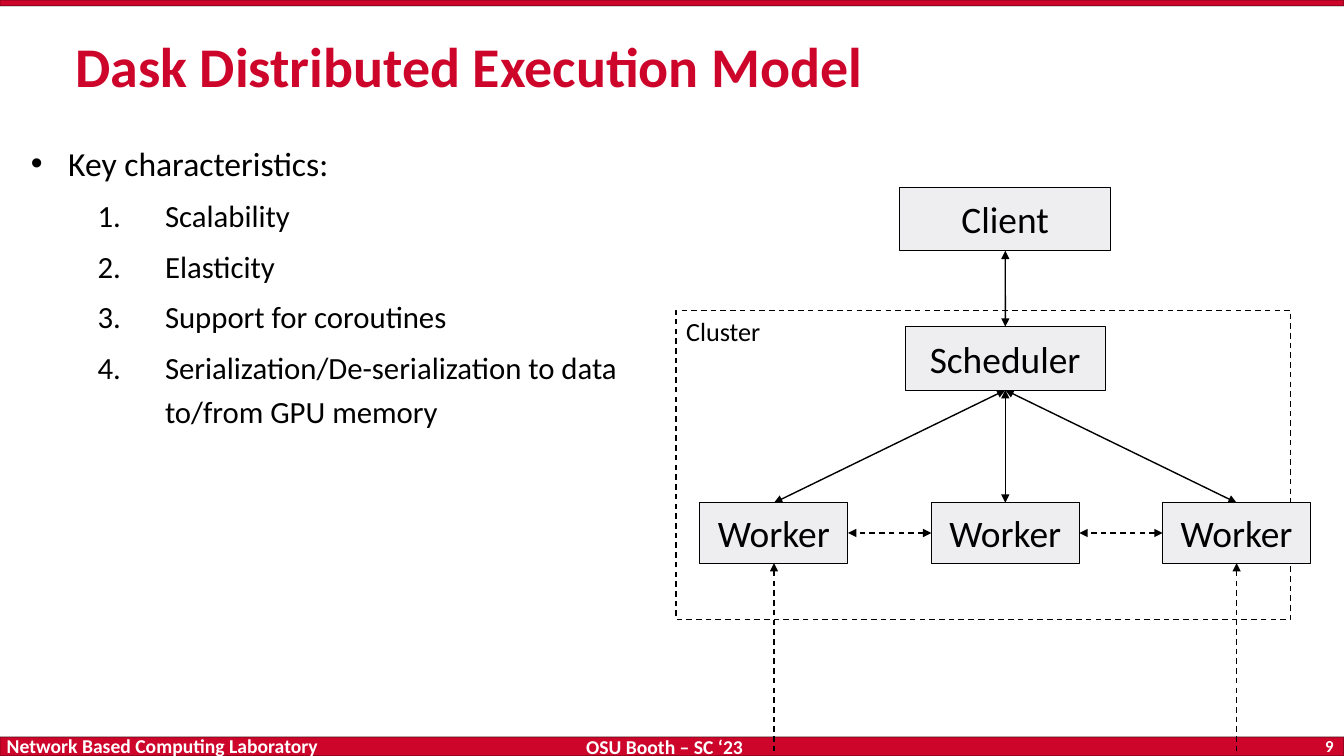
from lxml.etree import SubElement
from pptx import Presentation
from pptx.dml.color import RGBColor
from pptx.enum.dml import MSO_LINE
from pptx.enum.shapes import MSO_CONNECTOR, MSO_SHAPE
from pptx.enum.text import MSO_ANCHOR as ANCHOR, PP_ALIGN as ALIGN
from pptx.oxml.ns import qn
from pptx.util import Cm, Pt

COLORS = {"red": "CD052B", "black": "000000", "white": "FFFFFF", "box": "EEEEF1"}
RGB = {name: RGBColor.from_string(code) for name, code in COLORS.items()}
FONT = "Calibri"

prs = Presentation()
prs.slide_width, prs.slide_height = Cm(33.87), Cm(19.05)
s = prs.slides.add_slide(prs.slide_layouts[6])


def add_box(at, text="", size=18, fill=None, line=None, color="black",
            bold=False, align=ALIGN.LEFT, anchor=ANCHOR.MIDDLE):
    """Add a rectangle if it has a line, otherwise a text box."""
    at = [Cm(v) for v in at]
    if line:
        sp = s.shapes.add_shape(MSO_SHAPE.RECTANGLE, *at)
        sp.shadow.inherit = False
        sp.line.color.rgb = RGB["black"]
        sp.line.width = Pt(line)
        if fill:
            sp.fill.solid()
            sp.fill.fore_color.rgb = RGB[fill]
        else:
            sp.fill.background()
    else:
        sp = s.shapes.add_textbox(*at)
    tf = sp.text_frame
    tf.word_wrap = True
    tf.vertical_anchor = anchor
    tf.text = text
    for p in tf.paragraphs:
        p.alignment = align
        for r in p.runs:
            r.font.name, r.font.size, r.font.bold = FONT, Pt(size), bold
            r.font.color.rgb = RGB[color]
    return sp


def add_arrow(start, start_site, end=None, end_site=0, dashed=False):
    """Join two boxes, or run from one box down to the slide's bottom edge."""
    x = start.left + start.width // 2
    c = s.shapes.add_connector(MSO_CONNECTOR.STRAIGHT, x, start.top + start.height,
                               x, prs.slide_height)
    c.begin_connect(start, start_site)
    if end is not None:
        c.end_connect(end, end_site)
    c.line.color.rgb = RGB["black"]
    c.line.width = Pt(1)
    if dashed:
        c.line.dash_style = MSO_LINE.DASH
    ln = c.line._get_or_add_ln()
    for tag in ("a:headEnd", "a:tailEnd") if end is not None else ("a:headEnd",):
        SubElement(ln, qn(tag), type="triangle")
    SubElement(c._element.spPr, qn("a:effectLst"))


# Bars at the top and bottom, with faint outlines
for top, height in ((18.57, 0.48), (0, 0.15)):
    bar = add_box((0, top, 33.87, height), fill="red", line=1)
    outline = bar.line._get_or_add_ln().find(".//" + qn("a:srgbClr"))
    SubElement(outline, qn("a:alpha"), val="25000")

# Footer
footer = (
    ((-0.08, 18.54, 9.68, 0.66), "Network Based Computing Laboratory", 14, ALIGN.LEFT, ANCHOR.BOTTOM),
    ((11.91, 18.57, 9.68, 0.66), "OSU Booth – SC ‘23", 14, ALIGN.CENTER, ANCHOR.BOTTOM),
    ((31.62, 18.57, 2.24, 0.46), "9", 12, ALIGN.RIGHT, ANCHOR.MIDDLE),
)
for at, text, size, align, anchor in footer:
    add_box(at, text, size, color="white", bold=True, align=align, anchor=anchor)

# Title
add_box((1.65, 0.58, 28.52, 2.13), "Dask Distributed Execution Model", 40,
        color="red", bold=True)

# Key characteristics
items = ("Key characteristics:", "Scalability", "Elasticity", "Support for coroutines",
         "Serialization/De-serialization to data to/from GPU memory")
body = add_box((0.53, 3.28, 17.42, 14.2), "\n".join(items), 22, anchor=ANCHOR.TOP)
for i, p in enumerate(body.text_frame.paragraphs):
    p.line_spacing = 1.2
    pPr = p._p.get_or_add_pPr()
    if i == 0:
        margin, indent = 0.94, -0.94
        SubElement(pPr, qn("a:buFont"), typeface="Arial")
        SubElement(pPr, qn("a:buChar"), char="•")
        p.runs[0].font.size = Pt(24)
    else:
        margin, indent = 3.38, -1.7
        p.level = 1
        p.space_before = Pt(4.4)
        SubElement(pPr, qn("a:buFont"), typeface="+mj-lt")
        SubElement(pPr, qn("a:buAutoNum"), type="arabicPeriod")
    pPr.set("marL", str(Cm(margin)))
    pPr.set("indent", str(Cm(indent)))

# Cluster frame
cluster = add_box((17.04, 7.82, 15.49, 7.8), "Cluster", 18.7, line=1, anchor=ANCHOR.TOP)
cluster.line.dash_style = MSO_LINE.DASH

# Client, scheduler and evenly spaced workers
node = dict(size=26.7, fill="box", line=0.75, align=ALIGN.CENTER)
client = add_box((22.68, 4.72, 5.31, 1.6), "Client", **node)
scheduler = add_box((22.81, 8.23, 5.05, 1.6), "Scheduler", **node)
workers = [add_box((17.64 + 5.83 * i, 12.67, 3.73, 1.52), "Worker", **node)
           for i in range(3)]

# Arrows
add_arrow(client, 2, scheduler, 0)
for worker in workers:
    add_arrow(scheduler, 2, worker, 0)
for left, right in zip(workers, workers[1:]):
    add_arrow(right, 1, left, 3, dashed=True)
for worker in (workers[0], workers[-1]):
    add_arrow(worker, 2, dashed=True)

prs.save("out.pptx")
